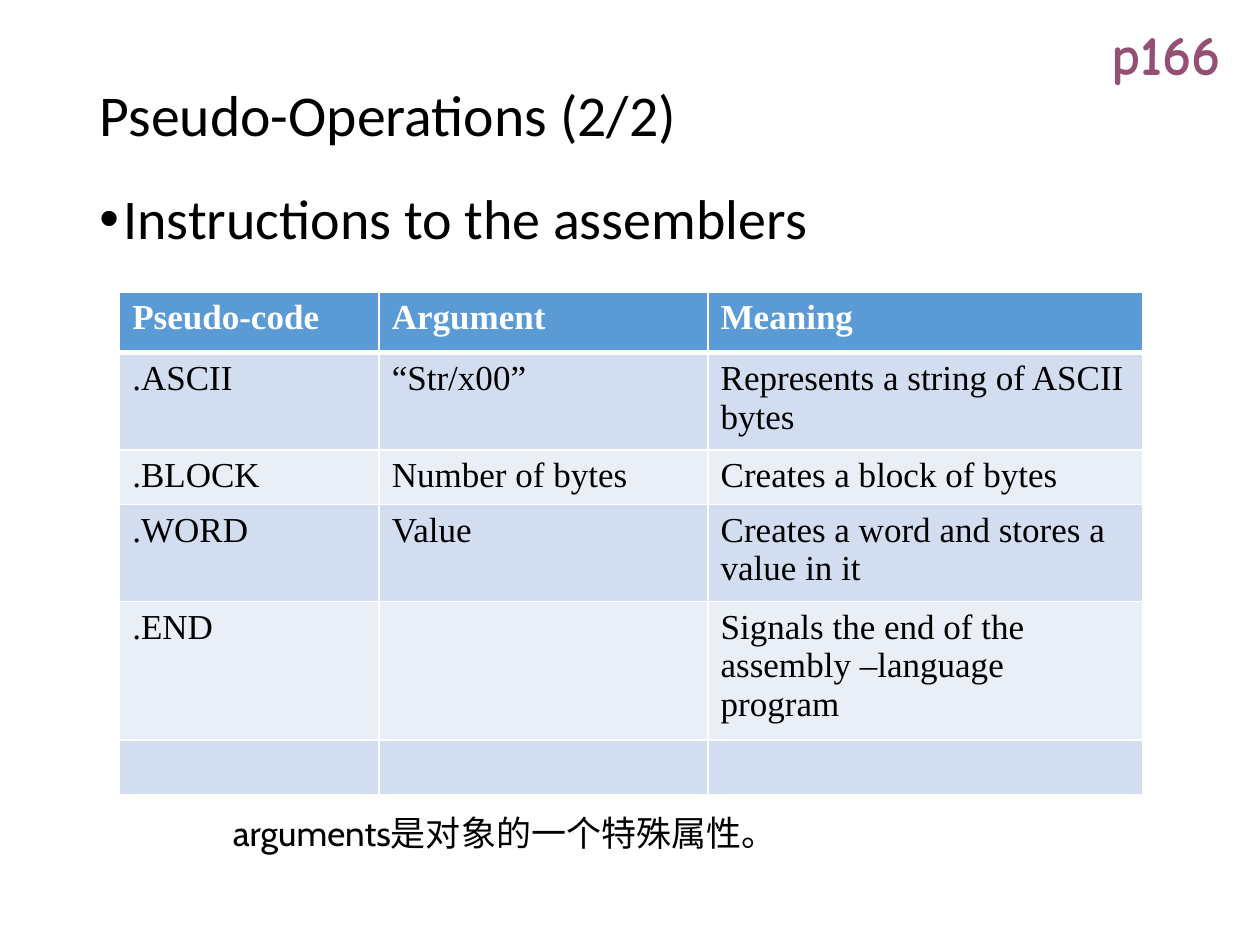
from lxml.etree import SubElement
from pptx import Presentation
from pptx.dml.color import RGBColor
from pptx.enum.text import MSO_ANCHOR, PP_ALIGN
from pptx.oxml.ns import qn
from pptx.util import Inches, Pt

BLACK, WHITE, PLUM = "000000", "FFFFFF", "954F72"
HEADER_BLUE, BAND_DARK, BAND_LIGHT = "5B9BD5", "D2DEEF", "EAEFF7"

COLUMN_WIDTHS = [2.06, 2.61, 3.45]
ROW_HEIGHTS = [0.48, 0.77, 0.43, 0.77, 1.1, 0.43]
PSEUDO_OPERATIONS = [
    ["Pseudo-code", "Argument", "Meaning"],
    [".ASCII", "“Str/x00”", "Represents a string of ASCII bytes"],
    [".BLOCK", "Number of bytes", "Creates a block of bytes"],
    [".WORD", "Value", "Creates a word and stores a value in it"],
    [".END", "", "Signals the end of the assembly –language program"],
    ["", "", ""],
]


def rgb(color):
    return RGBColor.from_string(color)


def write_text(frame, text, font="Calibri", size=20, color=BLACK, bold=False,
               spacing=None, indent=0, bullet=None):
    frame.word_wrap = True
    paragraph = frame.paragraphs[0]
    paragraph.alignment = PP_ALIGN.LEFT
    if spacing:
        paragraph.line_spacing = spacing
    properties = paragraph._p.get_or_add_pPr()
    if indent:
        properties.set("marL", str(Inches(indent)))
    if bullet:
        properties.set("indent", str(-Inches(indent)))
        SubElement(properties, qn("a:buFont"), typeface="Arial")
        SubElement(properties, qn("a:buChar"), char=bullet)
    run = paragraph.add_run()
    run.text = text
    run.font.name = font
    run.font.size = Pt(size)
    run.font.bold = bold
    run.font.color.rgb = rgb(color)


def add_text(slide, box, text, **text_format):
    textbox = slide.shapes.add_textbox(*map(Inches, box))
    write_text(textbox.text_frame, text, **text_format)


def place_title(slide, box, text):
    title = slide.shapes.title
    title.left, title.top, title.width, title.height = map(Inches, box)
    title.text_frame.vertical_anchor = MSO_ANCHOR.MIDDLE
    write_text(title.text_frame, text, size=33, spacing=0.9)


def set_borders(cell, bottom_width):
    properties = cell._tc.get_or_add_tcPr()
    for edge, width in (("L", 1), ("R", 1), ("T", 1), ("B", bottom_width)):
        line = SubElement(properties, qn(f"a:ln{edge}"), w=str(Pt(width)))
        line_fill = SubElement(line, qn("a:solidFill"))
        SubElement(line_fill, qn("a:srgbClr"), val=WHITE)


def add_operations_table(slide, box):
    table = slide.shapes.add_table(
        len(ROW_HEIGHTS), len(COLUMN_WIDTHS), *map(Inches, box)).table
    for column, width in zip(table.columns, COLUMN_WIDTHS):
        column.width = Inches(width)
    for row_index, values in enumerate(PSEUDO_OPERATIONS):
        row = table.rows[row_index]
        row.height = Inches(ROW_HEIGHTS[row_index])
        is_header = row_index == 0
        band = BAND_DARK if row_index % 2 else BAND_LIGHT
        for cell, value in zip(row.cells, values):
            set_borders(cell, 3 if is_header else 1)
            cell.fill.solid()
            cell.fill.fore_color.rgb = rgb(HEADER_BLUE if is_header else band)
            if value:
                write_text(cell.text_frame, value, font="Times New Roman",
                           color=WHITE if is_header else BLACK, bold=is_header)


def main():
    presentation = Presentation()
    presentation.slide_width = Inches(10)
    presentation.slide_height = Inches(7.5)
    slide = presentation.slides.add_slide(presentation.slide_layouts[5])

    place_title(slide, (0.69, 0.4, 8.62, 1.07), "Pseudo-Operations (2/2)")
    add_text(slide, (0.69, 1.47, 8.62, 0.7), "Instructions to the assemblers",
             size=32, spacing=0.9, indent=0.19, bullet="•")
    add_text(slide, (8.22, 0.11, 1.77, 0.64), "p166", font="Comic Neue",
             size=32, color=PLUM, bold=True, indent=0.5)
    add_operations_table(
        slide, (0.95, 2.32, sum(COLUMN_WIDTHS), sum(ROW_HEIGHTS)))
    add_text(slide, (1.75, 6.39, 5, 0.44), "arguments是对象的一个特殊属性。",
             font="Cabin")
    presentation.save("out.pptx")


if __name__ == "__main__":
    main()
